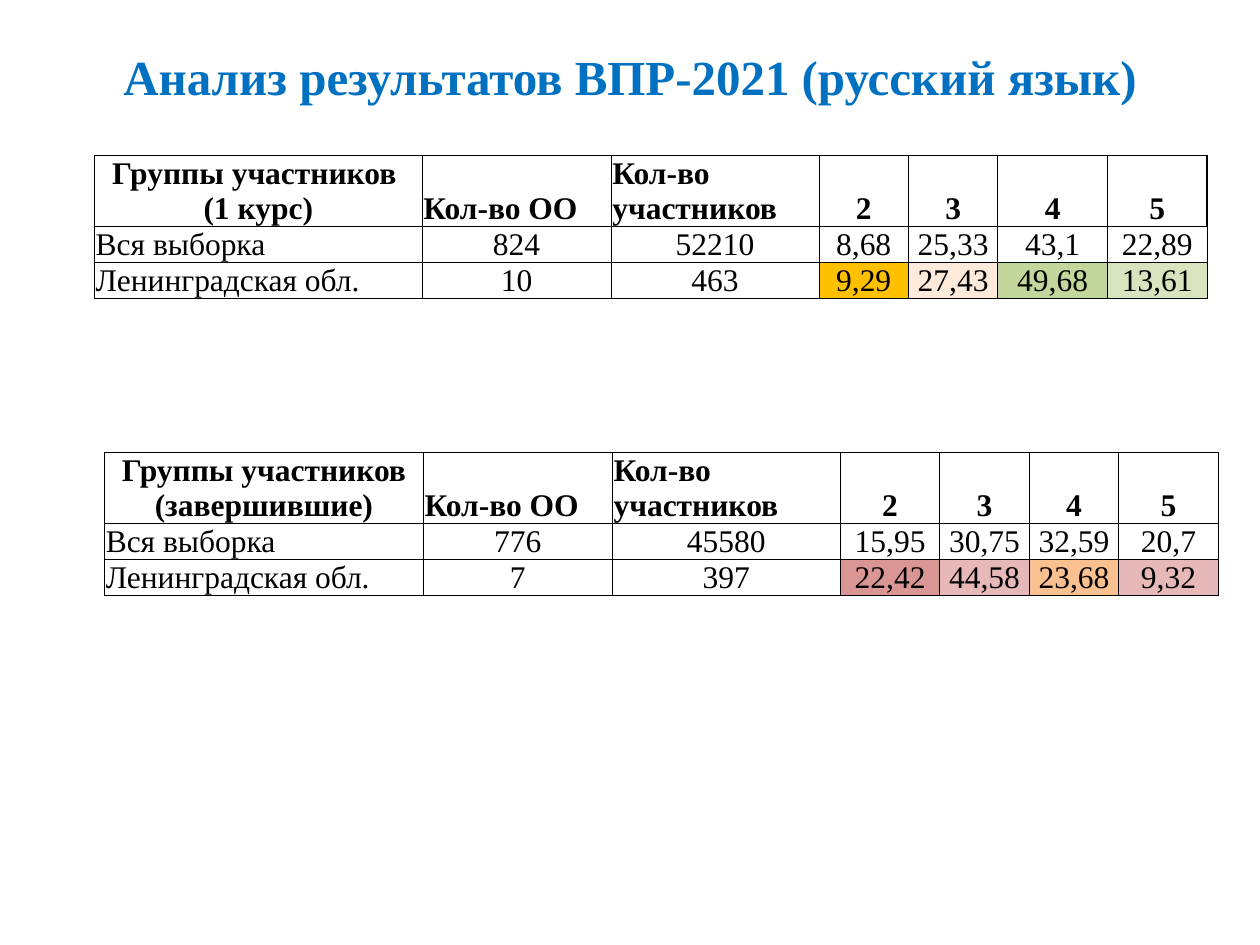
from lxml import etree
from pptx import Presentation
from pptx.dml.color import RGBColor
from pptx.enum import text
from pptx.oxml.ns import qn
from pptx.util import Inches, Pt

FONT = "Times New Roman"
BLUE = RGBColor(0x00, 0x70, 0xC0)
BLACK = RGBColor(0, 0, 0)
AMBER = RGBColor(0xFF, 0xC0, 0x00)
CREAM = RGBColor(0xFD, 0xEA, 0xDA)
GREEN = RGBColor(0xC3, 0xD6, 0x9B)
PALE_GREEN = RGBColor(0xD7, 0xE4, 0xBD)
RED = RGBColor(0xD9, 0x96, 0x94)
PINK = RGBColor(0xE6, 0xB9, 0xB8)
ORANGE = RGBColor(0xFA, 0xC0, 0x90)

LEFT, CENTER = text.PP_ALIGN.LEFT, text.PP_ALIGN.CENTER
HEADINGS = ["Кол-во ОО", "Кол-во участников", "2", "3", "4", "5"]


def write(tf, content, size=18, color=BLACK, bold=False, align=CENTER):
    """Fill a text frame, one paragraph per line of content."""
    for i, line in enumerate(content.split("\n")):
        p = tf.paragraphs[0] if i == 0 else tf.add_paragraph()
        p.alignment = align
        r = p.add_run()
        r.text = line
        r.font.name, r.font.size, r.font.bold = FONT, Pt(size), bold
        r.font.color.rgb = color


def set_borders(cell, **widths):
    """Draw black borders, 0.5 pt unless a side (L, R, T, B) is given."""
    tcPr = cell._tc.get_or_add_tcPr()
    for side in "LRTB":
        width = Pt(widths.get(side, 0.5))
        ln = etree.SubElement(tcPr, qn(f"a:ln{side}"), w=str(width))
        fill = etree.SubElement(ln, qn("a:solidFill"))
        etree.SubElement(fill, qn("a:srgbClr"), val=str(BLACK))


def add_title(slide, content, left, top, width, height):
    sp = slide.shapes.title
    sp.left, sp.top, sp.width, sp.height = map(Inches, (left, top, width, height))
    tf = sp.text_frame
    tf.word_wrap = True
    tf.vertical_anchor = text.MSO_ANCHOR.MIDDLE
    write(tf, content, size=28, color=BLUE, bold=True)


def add_results(slide, left, top, height, widths, group, sample, region, fills):
    """Table of results; fills colour the region's last cells."""
    rows = [[group] + HEADINGS,
            ["Вся выборка"] + sample,
            ["Ленинградская обл."] + region]
    last = len(widths) - 1
    frame = slide.shapes.add_table(len(rows), len(widths), Inches(left), Inches(top),
                                   Inches(sum(widths)), Inches(height))
    table = frame.table
    table.first_row = table.horz_banding = False
    for column, width in zip(table.columns, widths):
        column.width = Inches(width)
    for row in table.rows:
        row.height = Inches(0.18)  # rows grow to fit their text
    frame.height = Inches(height)

    for i, values in enumerate(rows):
        for j, value in enumerate(values):
            cell = table.cell(i, j)
            cell.margin_left = cell.margin_right = cell.margin_top = Inches(0.01)
            cell.margin_bottom = 0
            cell.vertical_anchor = text.MSO_ANCHOR.BOTTOM
            left_aligned = j in (1, 2) if i == 0 else j == 0
            write(cell.text_frame, value, bold=i == 0,
                  align=LEFT if left_aligned else CENTER)
            # Heavier outer edges on the heading row
            heavy = {0: {"L": 1}, last: {"R": 1}}.get(j, {}) if i == 0 else {}
            set_borders(cell, **heavy)
            mark = j - (len(values) - len(fills))
            if i == 2 and mark >= 0:
                cell.fill.solid()
                cell.fill.fore_color.rgb = fills[mark]
            else:
                cell.fill.background()


def main():
    prs = Presentation()
    prs.slide_width, prs.slide_height = Inches(10), Inches(7.5)
    slide = prs.slides.add_slide(prs.slide_layouts[5])

    add_title(slide, "Анализ результатов ВПР-2021 (русский язык)", 0.5, 0.3, 9, 0.61)

    # First-year students
    add_results(slide, 0.75, 1.23, 1.22, [2.6, 1.5, 1.65, 0.71, 0.71, 0.87, 0.79],
                "Группы участников \n(1 курс)",
                ["824", "52210", "8,68", "25,33", "43,1", "22,89"],
                ["10", "463", "9,29", "27,43", "49,68", "13,61"],
                [AMBER, CREAM, GREEN, PALE_GREEN])

    # Students who have finished
    add_results(slide, 0.83, 3.59, 1.22, [2.53, 1.5, 1.81, 0.79, 0.71, 0.71, 0.79],
                "Группы участников\n(завершившие)",
                ["776", "45580", "15,95", "30,75", "32,59", "20,7"],
                ["7", "397", "22,42", "44,58", "23,68", "9,32"],
                [RED, PINK, ORANGE, PINK])

    prs.save("out.pptx")


if __name__ == "__main__":
    main()
